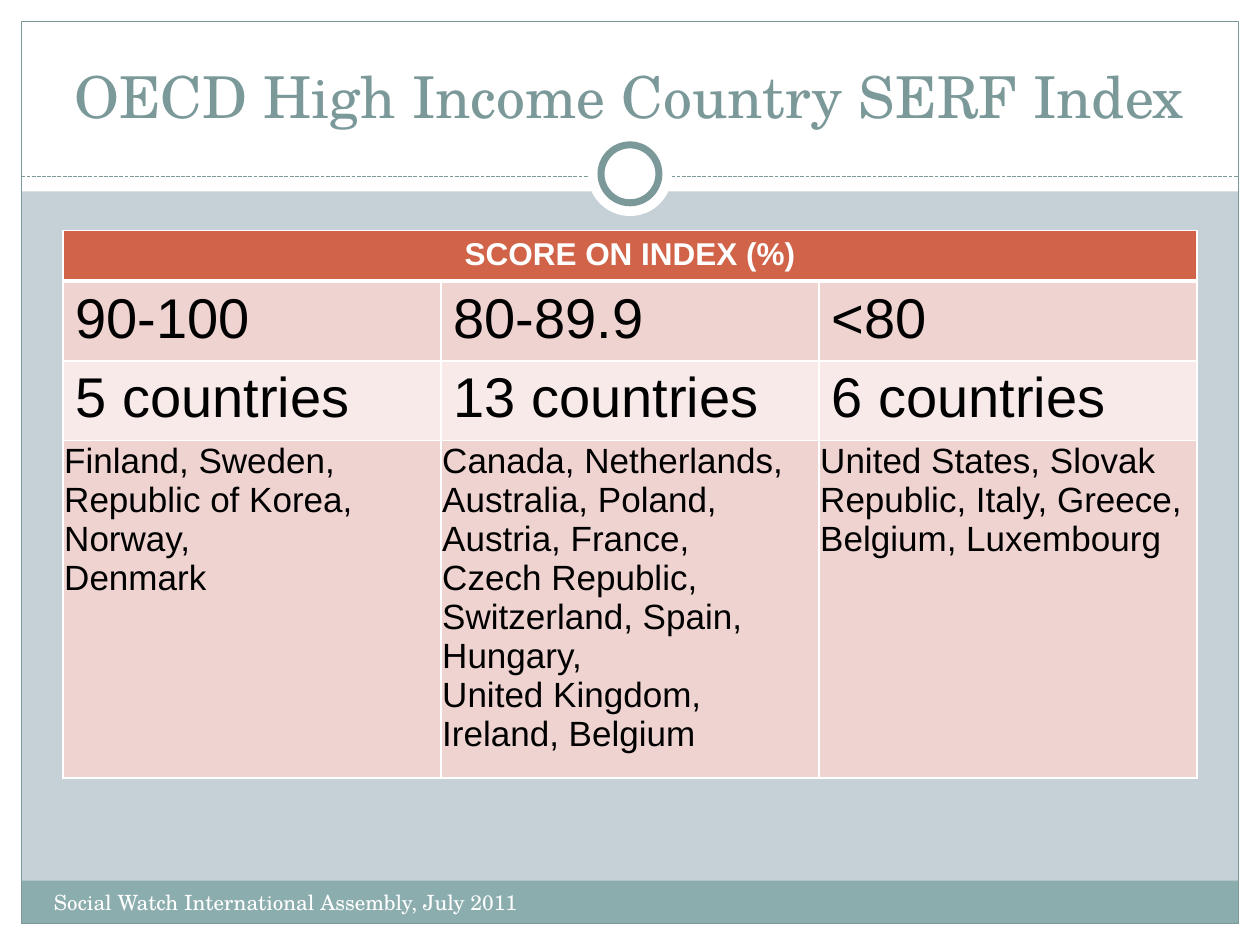
from lxml import etree
from pptx import Presentation
from pptx.dml.color import RGBColor
from pptx.enum.dml import MSO_LINE
from pptx.enum.shapes import MSO_CONNECTOR, MSO_SHAPE
from pptx.enum.text import MSO_ANCHOR, PP_ALIGN
from pptx.oxml.ns import qn
from pptx.util import Inches, Pt

RECT, OVAL = MSO_SHAPE.RECTANGLE, MSO_SHAPE.OVAL
LEFT, CENTER = PP_ALIGN.LEFT, PP_ALIGN.CENTER
TOP, BOTTOM = MSO_ANCHOR.TOP, MSO_ANCHOR.BOTTOM
WHITE, BLACK, TEAL, SAGE = "FFFFFF", "000000", "7C999A", "8CADAE"
RUST, PINK, PALE = "D16349", "EED3D0", "F7EAE9"
SANS, SERIF = "Arial", "TeX Gyre Schola"
W, H, EDGE = 10, 7.5, 0.17


def color(value):
    return RGBColor.from_string(value)


def write(tf, lines, align, size, name, ink, bold=False):
    """Fill a text frame with one paragraph per line, all in one format."""
    for i, line in enumerate(lines):
        p = tf.add_paragraph() if i else tf.paragraphs[0]
        p.alignment = align
        r = p.add_run()
        r.text = line
        for key, value in {"size": Pt(size), "name": name, "bold": bold}.items():
            setattr(r.font, key, value)
        r.font.color.rgb = color(ink)


prs = Presentation()
prs.slide_width, prs.slide_height = Inches(W), Inches(H)
s = prs.slides.add_slide(prs.slide_layouts[6])
s.background.fill.solid()
s.background.fill.fore_color.rgb = color("C5D1D7")

# White margins, footer band and page frame
inner_w, inner_h = W - 2 * EDGE, H - 2 * EDGE
panels = [
    (RECT, 0, H - EDGE, W, EDGE, WHITE, None, 0),
    (RECT, 0, 0, W, 1.52, WHITE, None, 0),
    (RECT, 0, 0, EDGE, H, WHITE, None, 0),
    (RECT, W - EDGE, 0, EDGE, H, WHITE, None, 0),
    (RECT, EDGE, 6.99, inner_w, 0.34, SAGE, None, 0),
    (RECT, EDGE, EDGE, inner_w, inner_h, None, TEAL, 0.75),
]
# Two circles with a common centre on the dashed rule
rings = [
    (OVAL, (W - d) / 2, 1.38 - d / 2, d, d, WHITE, line, width)
    for d, line, width in [(0.67, None, 0), (0.46, TEAL, 4)]
]


for kind, x, y, w, h, fill, line, width in panels + rings:
    if (kind, fill, line) == (OVAL, WHITE, None):
        rule = s.shapes.add_connector(
            MSO_CONNECTOR.STRAIGHT, Inches(EDGE), Inches(1.4), Inches(W - EDGE), Inches(1.4))
        rule.line.color.rgb = color(TEAL)
        rule.line.width = Pt(0.75)
        rule.line.dash_style = MSO_LINE.SQUARE_DOT
        etree.SubElement(rule._element.spPr, qn("a:effectLst"))
    sp = s.shapes.add_shape(kind, Inches(x), Inches(y), Inches(w), Inches(h))
    sp.shadow.inherit = False
    if fill:
        sp.fill.solid()
        sp.fill.fore_color.rgb = color(fill)
    else:
        sp.fill.background()
    if line:
        sp.line.color.rgb = color(line)
        sp.line.width = Pt(width)
    else:
        sp.line.fill.background()

# Title and footer
texts = [
    ("OECD High Income Country SERF Index", 0.25, 9.33, 0.83, BOTTOM, CENTER, 33, TEAL),
    ("Social Watch International Assembly, July 2011", 7.01, 3.92, 0.4, TOP, LEFT, 12, WHITE),
]
for text, y, w, h, anchor, align, size, ink in texts:
    tf = s.shapes.add_textbox(Inches(0.33), Inches(y), Inches(w), Inches(h)).text_frame
    tf.word_wrap = True
    tf.vertical_anchor = anchor
    write(tf, [text], align, size, SERIF, ink)

# Score table: each cell is a list of paragraphs
rows = [
    [["SCORE ON INDEX (%)"], [], []],
    [["90-100"], ["80-89.9"], ["<80"]],
    [["5 countries"], ["13 countries"], ["6 countries"]],
    [
        ["Finland, Sweden, Republic of Korea, Norway,", "Denmark"],
        ["Canada, Netherlands, Australia, Poland, Austria, France,",
         "Czech Republic, Switzerland, Spain,",
         "Hungary,",
         "United Kingdom, Ireland, Belgium"],
        ["United States, Slovak Republic, Italy, Greece,", "Belgium, Luxembourg"],
    ],
]
# Height, fill, alignment, text size, text colour, bold
formats = [
    (0.31, RUST, CENTER, 18, WHITE, True),
    (0.31, PINK, LEFT, 32, BLACK, False),
    (0.31, PALE, LEFT, 32, BLACK, False),
    (1.15, PINK, LEFT, 20, BLACK, False),
]
frame = s.shapes.add_table(4, 3, Inches(0.5), Inches(1.83), Inches(9), Inches(4.34))
table = frame.table
table.horz_banding = False
table.cell(0, 0).merge(table.cell(0, 2))
for i, (cells, (height, fill, align, size, ink, bold)) in enumerate(zip(rows, formats)):
    table.rows[i].height = Inches(height)
    for j, lines in enumerate(cells):
        cell = table.cell(i, j)
        tcPr = cell._tc.get_or_add_tcPr()
        for side in "LRTB":
            heavy = (i, side) in [(0, "B"), (1, "T")]
            ln = etree.SubElement(tcPr, qn(f"a:ln{side}"), w=str(Pt(3 if heavy else 1)))
            solid = etree.SubElement(ln, qn("a:solidFill"))
            etree.SubElement(solid, qn("a:srgbClr"), val=WHITE)
        cell.fill.solid()
        cell.fill.fore_color.rgb = color(fill)
        if i == 3:
            cell.margin_left = cell.margin_right = cell.margin_top = Inches(0.01)
            cell.margin_bottom = 0
        write(cell.text_frame, lines, align, size, SANS, ink, bold)
frame.height = Inches(4.34)

prs.save("out.pptx")
